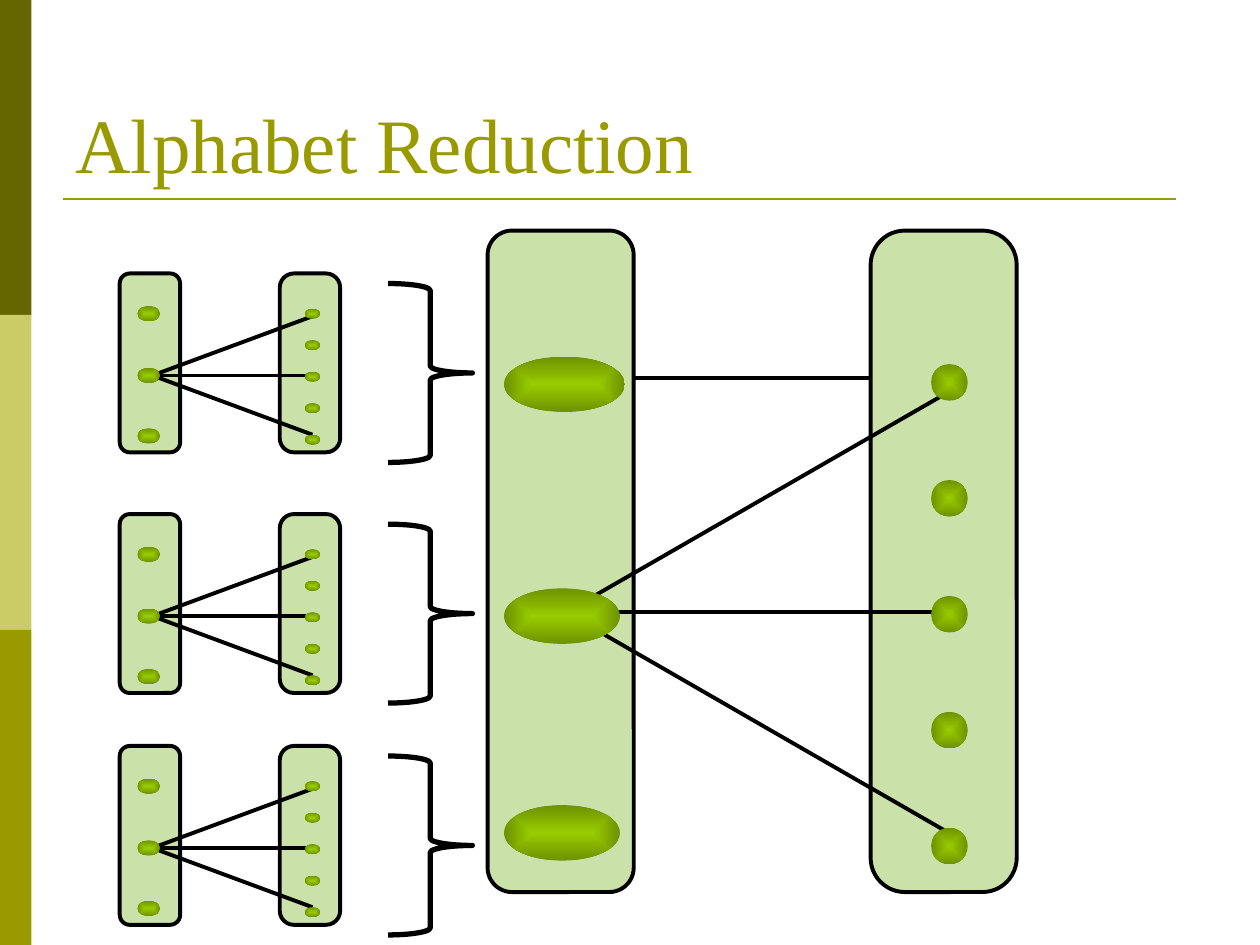
import pptx
import pptx.dml.color
import pptx.enum.shapes
import pptx.enum.text
import pptx.oxml
import pptx.oxml.ns
import pptx.util
from dataclasses import dataclass

Inches, Pt = pptx.util.Inches, pptx.util.Pt
SHAPE = pptx.enum.shapes.MSO_SHAPE
STRAIGHT = pptx.enum.shapes.MSO_CONNECTOR.STRAIGHT
NS = pptx.oxml.ns.nsdecls("a")


@dataclass(frozen=True)
class Theme:
    font: str = "Times New Roman"
    title_size: float = 44
    olive: str = "999900"
    sidebar: tuple = ("666600", "CCCC66", "999900")
    panel: str = "CAE2AA"
    ink: str = "000000"
    node_center: str = "99CC00"
    node_rim: str = "6D9200"
    rule_width: float = 1.5
    edge_width: float = 2.25
    brace_width: float = 3


THEME = Theme()
TITLE = "Alphabet Reduction"

# Lengths in inches; vertical positions are measured from the top of the panels.
LARGE_GRAPH = {
    "panel_lefts": (3.87, 6.91), "panel_size": (1.16, 5.25),
    "sources": [(4, 1, 0.96, 0.44), (4, 4.56, 0.92, 0.44), (4, 2.84, 0.92, 0.44)],
    "targets": {"left": 7.39, "top": 1.06, "step": 0.92, "size": (0.29, 0.29)},
    "hub": (4.49, 3.03), "edge_end": 7.53, "edge_rises": (1.75, 0, -1.75),
}
SMALL_GRAPH = {
    "panel_lefts": (0.95, 2.22), "panel_size": (0.48, 1.42),
    "sources": [(1.09, 0.26, 0.18, 0.12), (1.09, 1.23, 0.18, 0.12), (1.09, 0.75, 0.18, 0.12)],
    "targets": {"left": 2.42, "top": 0.28, "step": 0.25, "size": (0.12, 0.08)},
    "hub": (1.21, 0.81), "edge_end": 2.48, "edge_rises": (0.47, 0, -0.47),
}
TARGET_COUNT = 5
LARGE_TOP = 1.83
SMALL_TOPS = (2.17, 4.08, 5.92)
BRACE = {"left": 3.08, "drop": 0.08, "size": (0.67, 1.42)}
RIGHT_PANEL_ROUNDING = 0.235


def rgb(value):
    return pptx.dml.color.RGBColor.from_string(value)


def add_box(shapes, kind, left, top, width, height, fill=None, line=None, line_width=None):
    box = shapes.add_shape(kind, Inches(left), Inches(top), Inches(width), Inches(height))
    box.shadow.inherit = False
    if fill:
        box.fill.solid()
        box.fill.fore_color.rgb = rgb(fill)
    else:
        box.fill.background()
    if line:
        box.line.color.rgb = rgb(line)
        box.line.width = Pt(line_width)
    else:
        box.line.fill.background()
    return box


def add_line(shapes, start, end, color, width):
    line = shapes.add_connector(STRAIGHT, *(Inches(value) for value in (*start, *end)))
    line.line.color.rgb = rgb(color)
    line.line.width = Pt(width)
    line._element.spPr.append(pptx.oxml.parse_xml(f"<a:effectLst {NS}/>"))


def add_node(shapes, left, top, width, height):
    """Add an ellipse shaded from a bright centre to a dark rim."""
    node = add_box(shapes, SHAPE.OVAL, left, top, width, height)
    node.fill.gradient()
    for stop, color in zip(node.fill.gradient_stops, (THEME.node_center, THEME.node_rim)):
        stop.color.rgb = rgb(color)
    gradient = node._element.spPr.find(pptx.oxml.ns.qn("a:gradFill"))
    linear = gradient.find(pptx.oxml.ns.qn("a:lin"))
    gradient.replace(linear, pptx.oxml.parse_xml(
        f'<a:path {NS} path="shape">'
        '<a:fillToRect l="50000" t="50000" r="50000" b="50000"/></a:path>'))


def add_graph(slide, graph, top):
    """Add one bipartite graph; the last source is the hub and covers its edges."""
    shapes = slide.shapes.add_group_shape().shapes
    left_panel, right_panel = graph["panel_lefts"]
    for left in (right_panel, left_panel):
        panel = add_box(shapes, SHAPE.ROUNDED_RECTANGLE, left, top, *graph["panel_size"],
                        THEME.panel, THEME.ink, THEME.edge_width)
        if left == right_panel:
            panel.adjustments[0] = RIGHT_PANEL_ROUNDING

    *outer_sources, hub_source = graph["sources"]
    for left, drop, width, height in outer_sources:
        add_node(shapes, left, top + drop, width, height)

    hub_x, hub_drop = graph["hub"]
    hub_y = top + hub_drop
    for rise in graph["edge_rises"]:
        add_line(shapes, (hub_x, hub_y), (graph["edge_end"], hub_y + rise),
                 THEME.ink, THEME.edge_width)

    targets = graph["targets"]
    for index in range(TARGET_COUNT):
        add_node(shapes, targets["left"], top + targets["top"] + index * targets["step"],
                 *targets["size"])
    left, drop, width, height = hub_source
    add_node(shapes, left, top + drop, width, height)


def add_title(slide):
    box = slide.shapes.add_textbox(Inches(0.5), Inches(0.3), Inches(9), Inches(1.25))
    frame = box.text_frame
    frame.word_wrap = True
    frame.vertical_anchor = pptx.enum.text.MSO_ANCHOR.BOTTOM
    span = frame.paragraphs[0].add_run()
    span.text = TITLE
    span.font.name = THEME.font
    span.font.size = Pt(THEME.title_size)
    span.font.color.rgb = rgb(THEME.olive)


def main():
    deck = pptx.Presentation()
    deck.slide_width, deck.slide_height = Inches(10), Inches(7.5)
    slide = deck.slides.add_slide(deck.slide_layouts[6])

    for index, color in enumerate(THEME.sidebar):
        add_box(slide.shapes, SHAPE.RECTANGLE, 0, index * 2.5, 0.25, 2.5, color)
    add_line(slide.shapes, (0.5, 1.58), (9.33, 1.58), THEME.olive, THEME.rule_width)
    add_line(slide.shapes, (4.75, 3), (7.54, 3), THEME.ink, THEME.edge_width)
    add_title(slide)

    add_graph(slide, LARGE_GRAPH, LARGE_TOP)
    for top in SMALL_TOPS:
        add_graph(slide, SMALL_GRAPH, top)
        add_box(slide.shapes, SHAPE.RIGHT_BRACE, BRACE["left"], top + BRACE["drop"],
                *BRACE["size"], line=THEME.ink, line_width=THEME.brace_width)

    deck.save("out.pptx")


if __name__ == "__main__":
    main()
